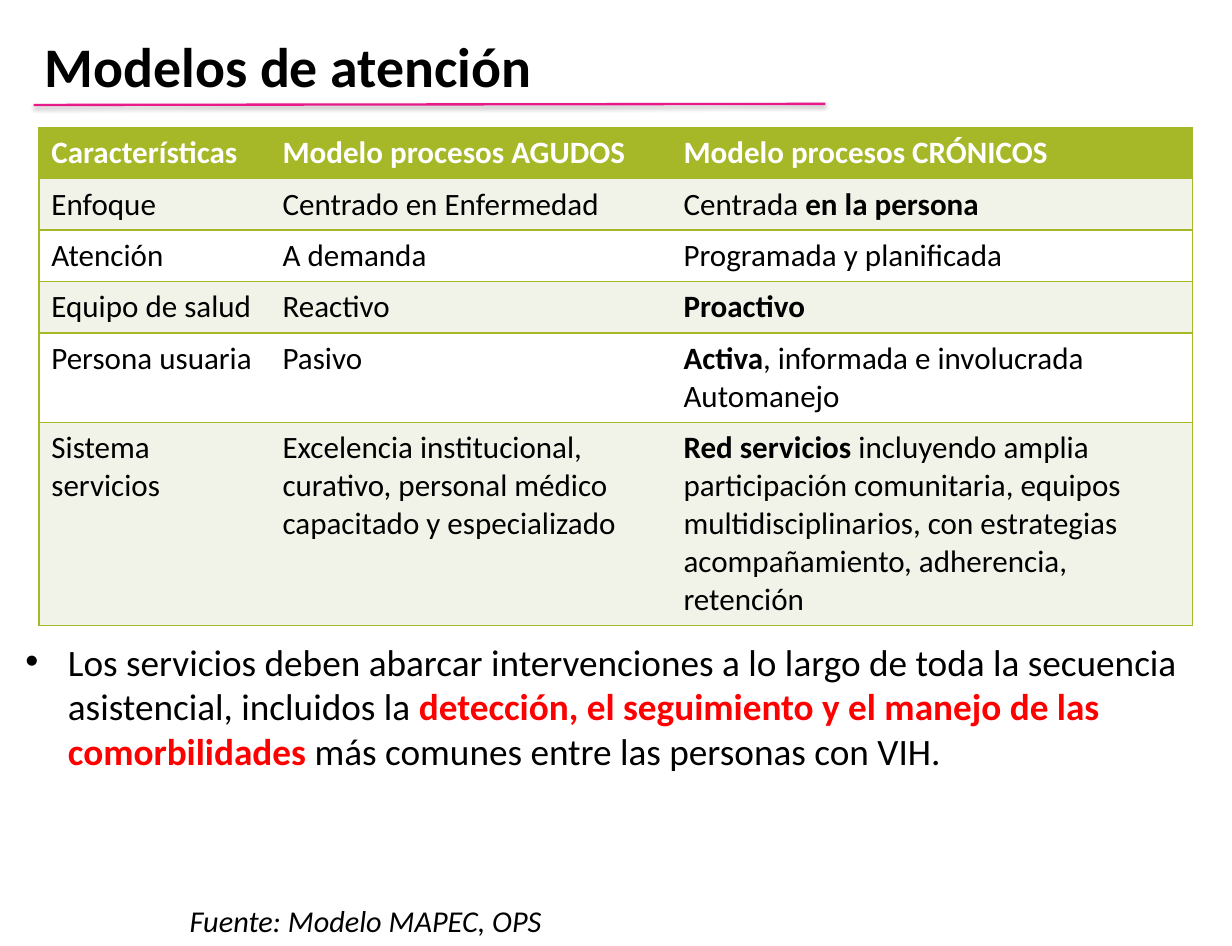
from lxml import etree
from pptx import Presentation, util as u
from pptx.dml.color import RGBColor
from pptx.enum import shapes, text
from pptx.oxml import parse_xml
from pptx.oxml.ns import nsdecls, qn

COLORS = {"ink": "000000", "white": "FFFFFF", "green": "A6B727",
          "band": "F1F3E8", "pink": "E81A8A", "red": "FF0000"}


def add_spans(para, content, color="ink", strong_color=None, **formats):
    """Add runs to the paragraph; parts between ** marks are bold."""
    for i, part in enumerate(content.split("**")):
        if not part:
            continue
        span = para.add_run()
        span.text = part
        strong = i % 2 == 1
        values = {"name": "Calibri", "bold": strong, **formats}
        for key, value in values.items():
            setattr(span.font, key, value)
        shade = strong_color if strong and strong_color else color
        span.font.color.rgb = RGBColor.from_string(COLORS[shade])


def add_border(cell, side, visible):
    properties = cell._tc.get_or_add_tcPr()
    line = etree.SubElement(properties, qn(f"a:ln{side}"), w=str(u.Pt(1)))
    if visible:
        fill = etree.SubElement(line, qn("a:solidFill"))
        etree.SubElement(fill, qn("a:srgbClr"), val=COLORS["green"])
    else:
        etree.SubElement(line, qn("a:noFill"))


deck = Presentation()
deck.slide_width, deck.slide_height = u.Inches(11.03), u.Inches(8.47)
page = deck.slides.add_slide(deck.slide_layouts[5])

# Comparison table
rows = [
    ["**Características**", "**Modelo procesos AGUDOS**", "**Modelo procesos CRÓNICOS**"],
    ["Enfoque", "Centrado en Enfermedad", "Centrada **en la persona**"],
    ["Atención", "A demanda", "Programada y planificada"],
    ["Equipo de salud", "Reactivo", "**Proactivo**"],
    ["Persona usuaria", "Pasivo", "**Activa**, informada e involucrada\nAutomanejo"],
    ["Sistema servicios",
     "Excelencia institucional, curativo, personal médico capacitado y especializado",
     "**Red servicios **incluyendo amplia participación comunitaria, equipos "
     "multidisciplinarios, con estrategias acompañamiento, adherencia, retención"],
]
widths = [2.07, 3.59, 4.67]
heights = [0.45, 0.45, 0.45, 0.45, 0.79, 1.81]
table = page.shapes.add_table(len(rows), len(widths), u.Inches(0.35), u.Inches(1.14),
                              u.Inches(sum(widths)), u.Inches(sum(heights))).table
for column, width in zip(table.columns, widths):
    column.width = u.Inches(width)
margins = {"margin_left": 0.11, "margin_right": 0.11, "margin_top": 0.06, "margin_bottom": 0.06}
for r, (row, height) in enumerate(zip(rows, heights)):
    table.rows[r].height = u.Inches(height)
    for c, content in enumerate(row):
        cell = table.cell(r, c)
        for key, value in margins.items():
            setattr(cell, key, u.Inches(value))
        visible = {"L": c == 0, "R": c == len(row) - 1, "T": True, "B": True}
        for side, shown in visible.items():
            add_border(cell, side, shown)
        background = "green" if r == 0 else "band" if r % 2 else "white"
        cell.fill.solid()
        cell.fill.fore_color.rgb = RGBColor.from_string(COLORS[background])
        for i, line in enumerate(content.split("\n")):
            para = cell.text_frame.paragraphs[0] if i == 0 else cell.text_frame.add_paragraph()
            add_spans(para, line, "white" if r == 0 else "ink", size=u.Pt(20))

# Rule under the title
rule = page.shapes.add_connector(shapes.MSO_CONNECTOR.STRAIGHT, u.Inches(0.3), u.Inches(0.94),
                                 u.Inches(7.39), u.Inches(0.93))
rule.line.color.rgb = RGBColor.from_string(COLORS["pink"])
rule.line.width = u.Pt(1.5)
rule._element.spPr.append(parse_xml(
    f'<a:effectLst {nsdecls("a")}><a:outerShdw blurRad="{u.Pt(3.1)}" dist="{u.Pt(1.8)}" '
    f'dir="5400000" rotWithShape="0"><a:srgbClr val="{COLORS["ink"]}"><a:alpha val="35000"/>'
    '</a:srgbClr></a:outerShdw></a:effectLst>'))

# Title
title = page.shapes.title
title.left, title.top, title.width, title.height = map(u.Inches, (0.3, 0.23, 4.73, 0.71))
frame = title.text_frame
frame.word_wrap = False
frame.auto_size = text.MSO_AUTO_SIZE.NONE
frame.vertical_anchor = text.MSO_ANCHOR.TOP
frame.paragraphs[0].alignment = text.PP_ALIGN.LEFT
add_spans(frame.paragraphs[0], "**Modelos de atención**", size=u.Pt(36))

# Key message
message = page.shapes.add_textbox(*map(u.Inches, (0.13, 5.67, 10.73, 1.31)))
message.text_frame.word_wrap = True
para = message.text_frame.paragraphs[0]
indent = u.Inches(0.38)
properties = para._p.get_or_add_pPr()
properties.set("marL", str(indent))
properties.set("indent", str(-indent))
etree.SubElement(properties, qn("a:buFont"), typeface="Arial")
etree.SubElement(properties, qn("a:buChar"), char="•")
add_spans(para, "Los servicios deben abarcar intervenciones a lo largo de toda la secuencia "
          "asistencial, incluidos la **detección, el seguimiento y el manejo de las "
          "comorbilidades **más comunes entre las personas con VIH.",
          strong_color="red", size=u.Pt(24))

# Source note
note = page.shapes.add_textbox(*map(u.Inches, (1.6, 8.03, 3.42, 0.43)))
note.text_frame.word_wrap = False
add_spans(note.text_frame.paragraphs[0], "Fuente: Modelo MAPEC, OPS", size=u.Pt(19.5), italic=True)

deck.save("out.pptx")
